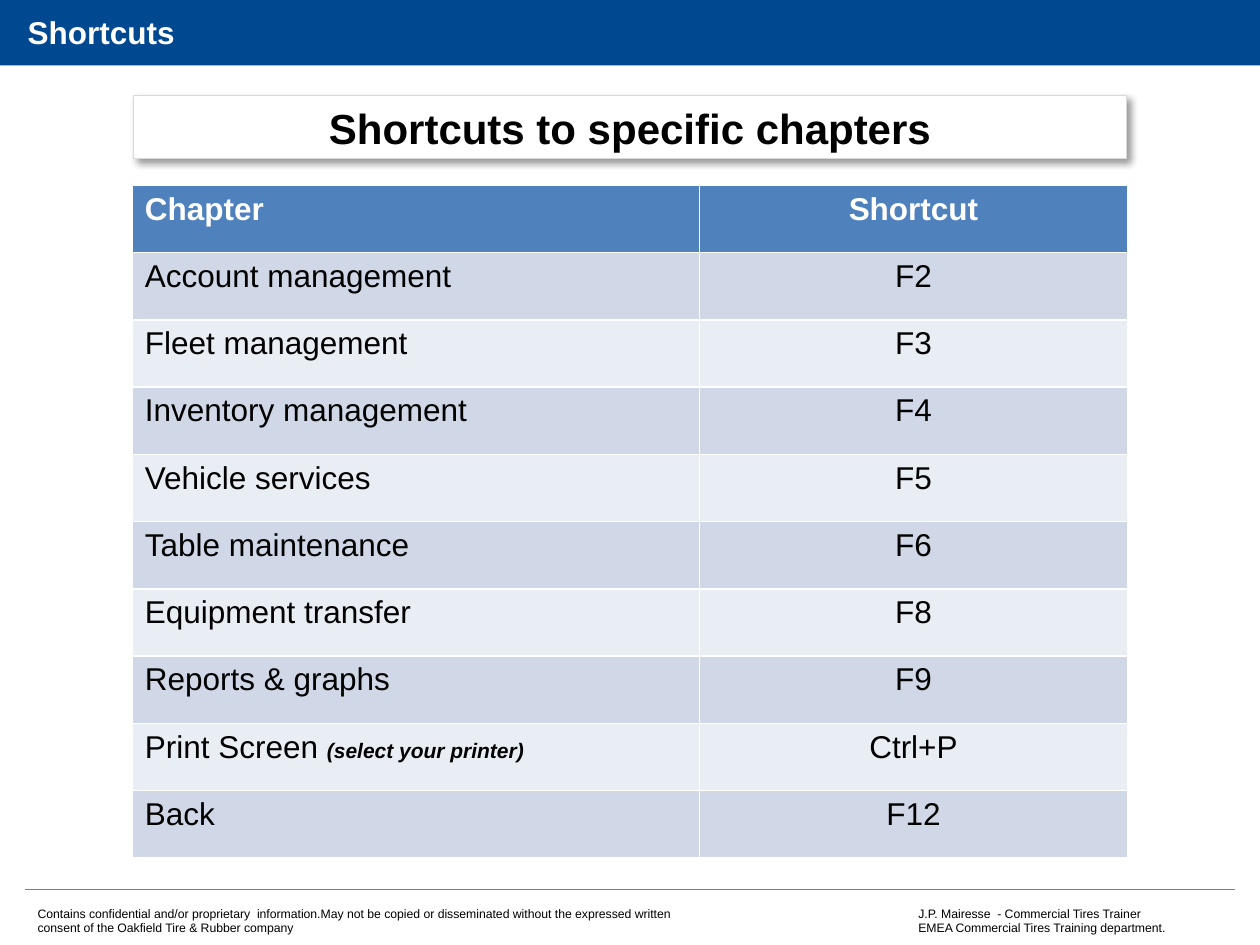
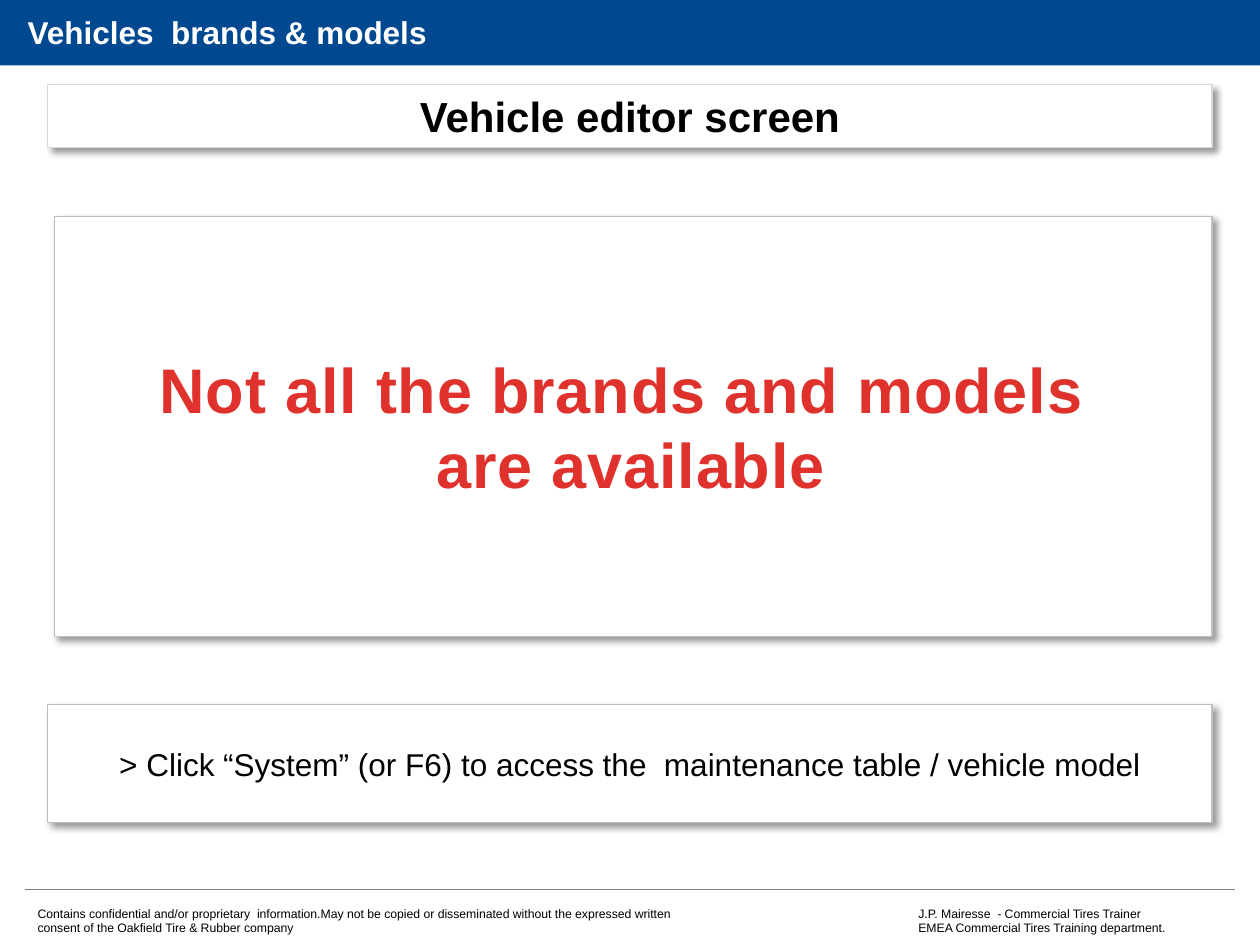
import pptx
import pptx.util
import pptx.dml.color
import pptx.oxml.ns
import pptx.enum.text
import pptx.enum.shapes
from lxml import etree

W, H = 10, 7.5
FONT = "Arial"
NAVY, WHITE, BLACK, GREY = "004890", "FFFFFF", "000000", "808080"
HEAD_FILL, ROW_FILLS = "4F81BD", ("D0D8E8", "E9EDF4")
PALE, SILVER = "D9D9D9", "BFBFBF"
WARNING_STOPS = (("E0322D", 0.25), ("A2201C", 1))
PP_ALIGN = pptx.enum.text.PP_ALIGN
MSO_ANCHOR = pptx.enum.text.MSO_ANCHOR

FOOTER = [
    "Contains confidential and/or proprietary  information.May not be copied or disseminated "
    "without the expressed written \tJ.P. Mairesse  - Commercial Tires Trainer",
    "consent of the Oakfield Tire & Rubber company\tEMEA Commercial Tires Training department.",
]
SHORTCUTS_TITLE = "Shortcuts"
SHORTCUTS_HEADING = "Shortcuts to specific chapters"
SHORTCUTS = [
    ("Chapter", "Shortcut"),
    ("Account management", "F2"),
    ("Fleet management", "F3"),
    ("Inventory management", "F4"),
    ("Vehicle services", "F5"),
    ("Table maintenance", "F6"),
    ("Equipment transfer", "F8"),
    ("Reports & graphs", "F9"),
    ("Print Screen ", "Ctrl+P"),
    ("Back", "F12"),
]
CHAPTER_NOTES = {"Print Screen ": "(select your printer)"}
VEHICLES_TITLE = "Vehicles  brands & models"
VEHICLES_HEADING = "Vehicle editor screen"
WARNING = ["Not all the brands and models", " are available"]
INSTRUCTION = "> Click “System” (or F6) to access the  maintenance table / vehicle model"


def rgb(color):
    return pptx.dml.color.RGBColor.from_string(color)


def inches(*values):
    return [pptx.util.Inches(v) for v in values]


def add_run(p, text, size, color=BLACK, bold=False, italic=False):
    r = p.add_run()
    r.text = text
    r.font.name, r.font.size = FONT, pptx.util.Pt(size)
    r.font.bold, r.font.italic = bold, italic
    r.font.color.rgb = rgb(color)
    return r


def fill_text(tf, lines, size, align=PP_ALIGN.LEFT, **style):
    for i, line in enumerate(lines):
        p = tf.paragraphs[0] if i == 0 else tf.add_paragraph()
        p.alignment = align
        add_run(p, line, size, **style)


def add_rect(s, box, fill, line=None):
    sp = s.shapes.add_shape(pptx.enum.shapes.MSO_SHAPE.RECTANGLE, *inches(*box))
    sp.shadow.inherit = False
    sp.fill.solid()
    sp.fill.fore_color.rgb = rgb(fill)
    if line:
        sp.line.color.rgb = rgb(line)
        sp.line.width = pptx.util.Pt(0.75)
    else:
        sp.line.fill.background()
    return sp


def add_panel(s, box, line, text=None, size=18, bold=False):
    sp = add_rect(s, box, WHITE, line)
    qn = pptx.oxml.ns.qn
    effects = sp.element.spPr.find(qn("a:effectLst"))
    shadow = etree.SubElement(effects, qn("a:outerShdw"), blurRad="50800", dist="38100",
                              dir="2700000", algn="tl", rotWithShape="0")
    black = etree.SubElement(shadow, qn("a:srgbClr"), val=BLACK)
    etree.SubElement(black, qn("a:alpha"), val="40000")
    if text:
        sp.text_frame.word_wrap = True
        sp.text_frame.vertical_anchor = MSO_ANCHOR.MIDDLE
        fill_text(sp.text_frame, [text], size, PP_ALIGN.CENTER, bold=bold)


def add_heading(s, left, top, text):
    add_panel(s, (left, top, W - 2 * left, 0.5), PALE, text, 24, True)


def add_frame(s, layout):
    qn = pptx.oxml.ns.qn
    band = add_rect(s, (0, 0, W, 0.52), NAVY)
    rule = s.shapes.add_connector(pptx.enum.shapes.MSO_CONNECTOR.STRAIGHT,
                                  *inches(0.2, 7.06, W - 0.2, 7.06))
    rule.line.color.rgb = rgb(GREY)
    rule.line.width = pptx.util.Pt(0.75)
    etree.SubElement(rule.element.spPr, qn("a:effectLst"))
    footer = s.shapes.add_textbox(*inches(0.2, 7.14, 9.72, 0.34))
    footer.text_frame.word_wrap = True
    fill_text(footer.text_frame, FOOTER, 7)
    for p in footer.text_frame.paragraphs:
        tabs = etree.SubElement(p._p.get_or_add_pPr(), qn("a:tabLst"))
        etree.SubElement(tabs, qn("a:tab"), pos=str(pptx.util.Inches(6.99)), algn="l")
    for number, sp in enumerate((band, rule, footer), 101):
        sp.element.find(".//" + qn("p:cNvPr")).set("id", str(number))
        layout.shapes.element.append(sp.element)


def add_slide(prs, layout, title):
    s = prs.slides.add_slide(layout)
    sp = s.shapes.title
    sp.left, sp.top, sp.width, sp.height = inches(0.12, 0.05, 4.17, 0.4)
    tf = sp.text_frame
    tf.auto_size = pptx.enum.text.MSO_AUTO_SIZE.NONE
    tf.word_wrap = True
    tf.vertical_anchor = MSO_ANCHOR.MIDDLE
    fill_text(tf, [title], 18, color=WHITE, bold=True)
    return s


def add_shortcuts_table(s):
    widths, row_height = (4.5, 3.4), 0.534
    left = (W - sum(widths)) / 2
    table = s.shapes.add_table(len(SHORTCUTS), len(widths), *inches(
        left, 1.47, sum(widths), row_height * len(SHORTCUTS))).table
    for column, width in zip(table.columns, widths):
        column.width = pptx.util.Inches(width)
    for i, row in enumerate(SHORTCUTS):
        header = i == 0
        for j, text in enumerate(row):
            cell = table.cell(i, j)
            cell.fill.solid()
            cell.fill.fore_color.rgb = rgb(HEAD_FILL if header else ROW_FILLS[(i - 1) % 2])
            fill_text(cell.text_frame, [text], 18, PP_ALIGN.CENTER if j else PP_ALIGN.LEFT,
                      color=WHITE if header else BLACK, bold=header)
            if text in CHAPTER_NOTES:
                add_run(cell.text_frame.paragraphs[0], CHAPTER_NOTES[text], 12,
                        bold=True, italic=True)


def add_warning(s):
    tf = s.shapes.add_textbox(*inches(1.13, 2.73, 7.61, 1.31)).text_frame
    tf.word_wrap = False
    fill_text(tf, WARNING, 36, PP_ALIGN.CENTER, bold=True)
    for p in tf.paragraphs:
        for r in p.runs:
            r.font.fill.gradient()
            r.font.fill.gradient_angle = 270
            for stop, (color, position) in zip(r.font.fill.gradient_stops, WARNING_STOPS):
                stop.color.rgb = rgb(color)
                stop.position = position
            r._r.get_or_add_rPr().set("spc", "50")


def main():
    prs = pptx.Presentation()
    prs.slide_width, prs.slide_height = inches(W, H)
    layout = prs.slide_layouts.get_by_name("Title Only")

    s = add_slide(prs, layout, SHORTCUTS_TITLE)
    add_frame(s, layout)
    add_shortcuts_table(s)
    add_heading(s, 1.06, 0.76, SHORTCUTS_HEADING)

    s = add_slide(prs, layout, VEHICLES_TITLE)
    add_heading(s, 0.38, 0.67, VEHICLES_HEADING)
    add_panel(s, (0.38, 5.59, 9.24, 0.94), SILVER, INSTRUCTION)
    add_panel(s, (0.43, 1.72, 9.19, 3.33), SILVER)
    add_warning(s)

    prs.save("out.pptx")


if __name__ == "__main__":
    main()
